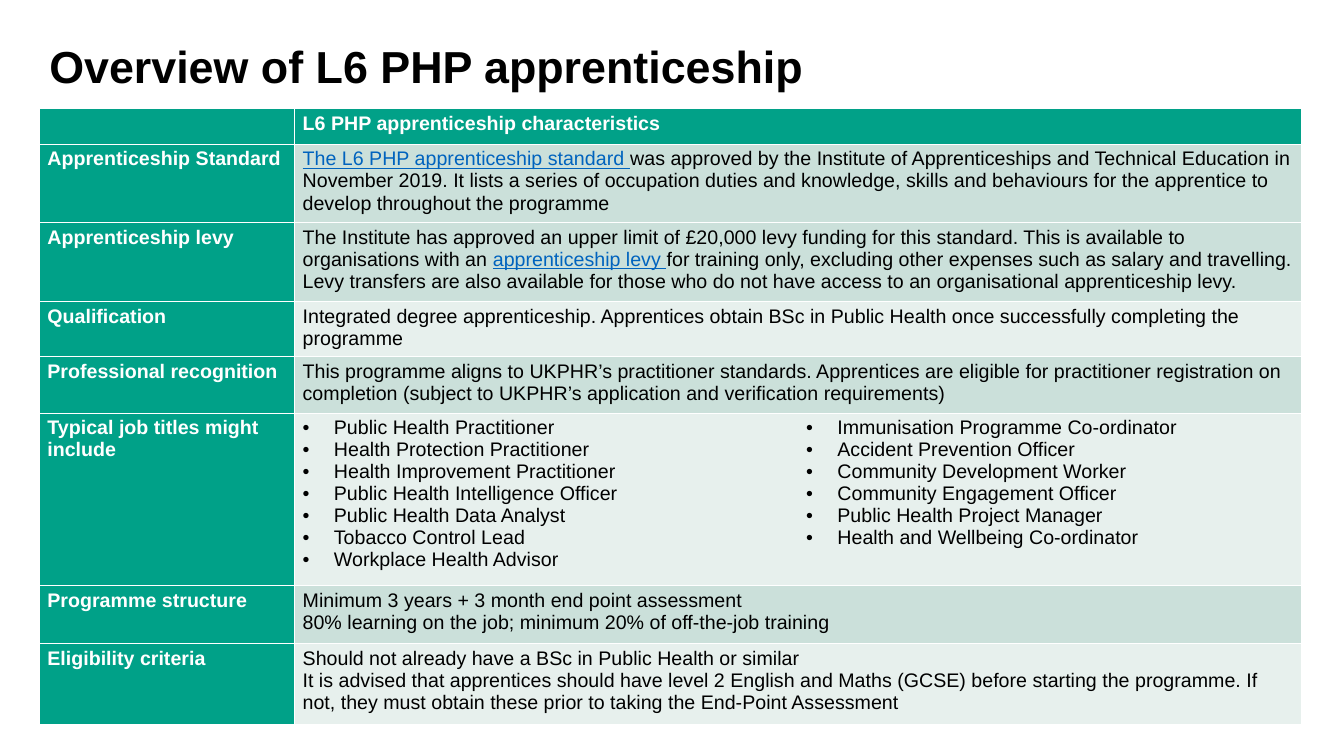
from pptx import Presentation
from pptx.dml.color import RGBColor as Rgb
from pptx.enum.text import MSO_ANCHOR as Anchor
from pptx.oxml import parse_xml
from pptx.oxml.ns import nsdecls
from pptx.util import Inches as In, Pt

HUES = {"head": "01A188", "side": "00A188", "dark": "CBE0DA", "pale": "E7F0ED",
        "white": "FFFFFF", "black": "000000", "link": "0063BE"}
WIDE, HIGH = 13.33, 7.5
COLS = [2.53, 4.99, 4.99]
INSET = {"margin_left": In(0.08), "margin_right": In(0.08),
         "margin_top": In(0.04), "margin_bottom": In(0.04)}
ROWS = [
    (0.35, "head", "", [["L6 PHP apprenticeship characteristics"]]),
    (0.74, "dark", "Apprenticeship Standard", [[
        "|The L6 PHP apprenticeship standard |was approved by the Institute of Apprenticeships "
        "and Technical Education in November 2019. It lists a series of occupation duties and "
        "knowledge, skills and behaviours for the apprentice to develop throughout the programme"]]),
    (0.73, "dark", "Apprenticeship levy", [[
        "The Institute has approved an upper limit of £20,000 levy funding for this standard. "
        "This is available to organisations with an |apprenticeship levy |for training only, "
        "excluding other expenses such as salary and travelling. Levy transfers are also available "
        "for those who do not have access to an organisational apprenticeship levy."]]),
    (0.52, "pale", "Qualification", [[
        "Integrated degree apprenticeship. Apprentices obtain BSc in Public Health once "
        "successfully completing the programme"]]),
    (0.56, "dark", "Professional recognition", [[
        "This programme aligns to UKPHR’s practitioner standards. Apprentices are eligible for "
        "practitioner registration on completion (subject to UKPHR’s application and "
        "verification requirements)"]]),
    (1.61, "pale", "Typical job titles might include", [
        ["Public Health Practitioner", "Health Protection Practitioner",
         "Health Improvement Practitioner", "Public Health Intelligence Officer",
         "Public Health Data Analyst", "Tobacco Control Lead", "Workplace Health Advisor"],
        ["Immunisation Programme Co-ordinator", "Accident Prevention Officer",
         "Community Development Worker", "Community Engagement Officer",
         "Public Health Project Manager", "Health and Wellbeing Co-ordinator"]]),
    (0.57, "dark", "Programme structure", [[
        "Minimum 3 years + 3 month end point assessment",
        "80% learning on the job; minimum 20% of off-the-job training"]]),
    (0.81, "pale", "Eligibility criteria", [[
        "Should not already have a BSc in Public Health or similar",
        "It is advised that apprentices should have level 2 English and Maths (GCSE) before "
        "starting the programme. If not, they must obtain these prior to taking the "
        "End-Point Assessment"]]),
]


def apply(item, vals):
    for name, val in vals.items():
        setattr(item, name, val)


def style(font, hue, size=14, bold=False, line=False):
    apply(font, {"name": "Arial", "size": Pt(size), "bold": bold, "underline": line})
    font.color.rgb = Rgb.from_string(HUES[hue])


def bullet(para):
    props = para._p.get_or_add_pPr()
    props.set("marL", str(In(0.31)))
    props.set("indent", str(-In(0.31)))
    props.append(parse_xml(f'<a:buFont {nsdecls("a")} typeface="Arial"/>'))
    props.append(parse_xml(f'<a:buChar {nsdecls("a")} char="•"/>'))


def edge(cell, bare):
    props = cell._tc.get_or_add_tcPr()
    solid = f'<a:solidFill><a:srgbClr val="{HUES["white"]}"/></a:solidFill>'
    for spot, side in enumerate("LRTB"):
        paint = "<a:noFill/>" if side in bare else solid
        props.insert(spot, parse_xml(
            f'<a:ln{side} {nsdecls("a")} w="{Pt(0.75)}">{paint}</a:ln{side}>'))


def write(cell, lines, fill, hue, bold=False, marks=False, bare=""):
    apply(cell, INSET)
    cell.fill.solid()
    cell.fill.fore_color.rgb = Rgb.from_string(HUES[fill])
    edge(cell, bare)
    for spot, line in enumerate(lines):
        frame = cell.text_frame
        para = frame.add_paragraph() if spot else frame.paragraphs[0]
        if marks:
            bullet(para)
        style(para.font, hue, bold=bold)
        for turn, part in enumerate(line.split("|")):
            if part:
                run = para.add_run()
                run.text = part
                style(run.font, "link" if turn % 2 else hue, bold=bold, line=bool(turn % 2))


def title(slide, left, top, wide, high):
    frame = slide.shapes.add_textbox(In(left), In(top), In(wide), In(high)).text_frame
    apply(frame, {"word_wrap": True, "vertical_anchor": Anchor.TOP})
    para = frame.paragraphs[0]
    para.line_spacing = 0.9
    run = para.add_run()
    run.text = "Overview of L6 PHP apprenticeship"
    style(run.font, "black", 32, True)


def facts(slide, left, top, wide):
    high = sum(row[0] for row in ROWS)
    grid = slide.shapes.add_table(len(ROWS), len(COLS), In(left), In(top),
                                  In(wide), In(high)).table
    apply(grid, {"first_row": False, "horz_banding": False})
    for col, size in zip(grid.columns, COLS):
        col.width = In(wide * size / sum(COLS))
    for num, (tall, fill, label, parts) in enumerate(ROWS):
        grid.rows[num].height = In(tall)
        head, split = fill == "head", len(parts) > 1
        write(grid.cell(num, 0), [label], "head" if head else "side", "white", True)
        if not split:
            grid.cell(num, 1).merge(grid.cell(num, 2))
        for col, lines in enumerate(parts, 1):
            bare = " RL"[col] if split else ""
            write(grid.cell(num, col), lines, fill, "white" if head else "black",
                  head, split, bare)


def main():
    deck = Presentation()
    apply(deck, {"slide_width": In(WIDE), "slide_height": In(HIGH)})
    slide = deck.slides.add_slide(deck.slide_layouts[6])
    title(slide, 0.39, 0.39, 12.52, 0.92)
    facts(slide, 0.39, 1.08, 12.52)
    deck.save("out.pptx")


if __name__ == "__main__":
    main()
